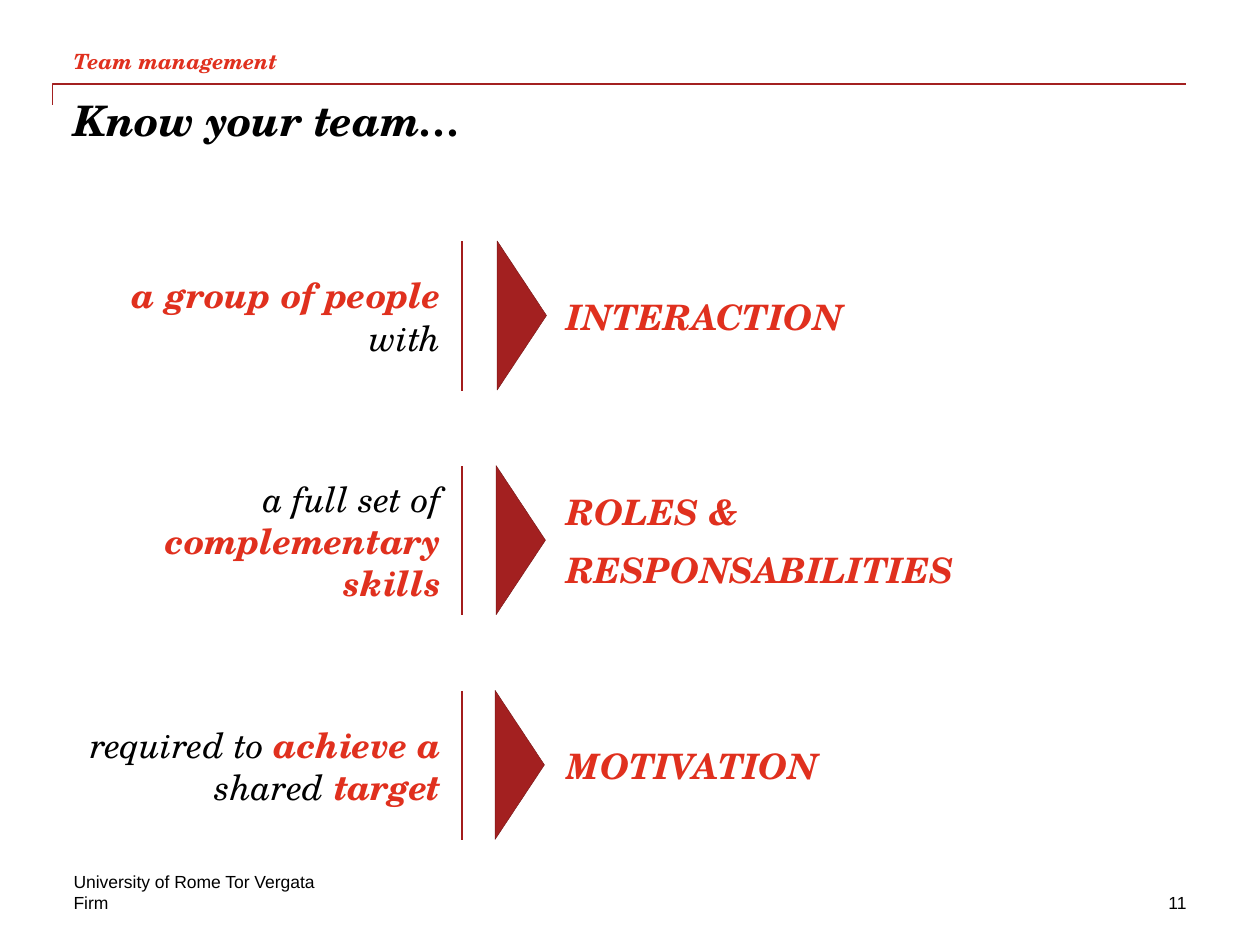
import pptx
import pptx.util
import pptx.dml.color
import pptx.enum.shapes
import pptx.enum.text
import pptx.oxml.ns
from lxml import etree

RGBColor = pptx.dml.color.RGBColor
ALIGN = pptx.enum.text.PP_ALIGN
ANCHOR = pptx.enum.text.MSO_ANCHOR
SHAPES = pptx.enum.shapes

PX = 7620
BLACK = RGBColor(0x00, 0x00, 0x00)
RED = RGBColor(0xE0, 0x30, 0x1E)
DARK_RED = RGBColor(0xA3, 0x20, 0x20)
RULE_RED = RGBColor(0xA3, 0x1C, 0x1C)
EDGE_RED = RGBColor(0x79, 0x18, 0x18)
SERIF = "TeX Gyre Schola"
SANS = "Arial"

ROWS = [
    ([("a group of people ", True), ("with", False)], ["INTERACTION"]),
    ([("a full set of ", False), ("complementary skills", True)],
     ["ROLES &", "RESPONSABILITIES"]),
    ([("required to ", False), ("achieve a", True), (" shared ", False),
      ("target", True)], ["MOTIVATION"]),
]


def add_text(s, box, paragraphs, size, font=SERIF, align=ALIGN.LEFT,
             anchor=ANCHOR.TOP, after=0):
    sp = s.shapes.add_textbox(*(v * PX for v in box))
    tf = sp.text_frame
    tf.word_wrap = True
    tf.vertical_anchor = anchor
    tf.margin_left = tf.margin_top = tf.margin_right = tf.margin_bottom = 0
    for i, runs in enumerate(paragraphs):
        p = tf.add_paragraph() if i else tf.paragraphs[0]
        p.alignment = align
        p.space_after = pptx.util.Pt(after)
        for text, color, bold in runs:
            r = p.add_run()
            r.text = text
            r.font.name = font
            r.font.size = pptx.util.Pt(size)
            r.font.bold = bold
            r.font.italic = font == SERIF
            r.font.color.rgb = color


def add_header(s, x, y, w):
    fb = s.shapes.build_freeform(x * PX, (y + 60) * PX)
    fb.add_line_segments([(x * PX, (y + 40) * PX),
                          ((x + w) * PX, (y + 40) * PX)], close=False)
    sp = fb.convert_to_shape()
    sp.shadow.inherit = False
    sp.fill.background()
    sp.line.color.rgb = DARK_RED
    sp.line.width = pptx.util.Pt(1)
    add_text(s, (x + 20, y, w - 20, 30), [[("Team management", RED, True)]],
             12, anchor=ANCHOR.BOTTOM)
    add_text(s, (x + 20, y + 50, w - 20, 120),
             [[("Know your team…", BLACK, True)]], 24)


def add_row(s, x, y, w, h, phrase, outcome, tip_shift):
    add_text(s, (x, y, 350, h),
             [[(text, RED if strong else BLACK, strong)
               for text, strong in phrase]],
             20, align=ALIGN.RIGHT, anchor=ANCHOR.MIDDLE, after=9)

    line = s.shapes.add_connector(
        SHAPES.MSO_CONNECTOR.STRAIGHT,
        (x + 370) * PX, y * PX, (x + 370) * PX, (y + h) * PX)
    line.line.color.rgb = RULE_RED
    line.line.width = pptx.util.Pt(0.75)
    etree.SubElement(line._element.spPr, pptx.oxml.ns.qn("a:effectLst"))

    depth = 47
    center = x + 427 - tip_shift
    sp = s.shapes.add_shape(
        SHAPES.MSO_SHAPE.ISOSCELES_TRIANGLE,
        (center - h // 2) * PX, (y + (h - depth) // 2) * PX, h * PX, depth * PX)
    sp.rotation = 90
    sp.shadow.inherit = False
    sp.fill.solid()
    sp.fill.fore_color.rgb = DARK_RED
    sp.line.color.rgb = EDGE_RED
    sp.line.width = pptx.util.Pt(0.25)

    add_text(s, (x + 470, y, w - 470, h),
             [[(text, RED, True)] for text in outcome],
             20, anchor=ANCHOR.MIDDLE, after=9)


def add_footer(s, x, y, w):
    add_text(s, (x, y, 690, 20),
             [[("University of Rome Tor Vergata", BLACK, False)]],
             10, SANS, anchor=ANCHOR.BOTTOM)
    add_text(s, (x, y + 20, 340, 20), [[("Firm", BLACK, False)]], 10, SANS)
    add_text(s, (x + w - 200, y + 20, 200, 20), [[("11", BLACK, False)]],
             10, SANS, align=ALIGN.RIGHT)


def main():
    prs = pptx.Presentation()
    prs.slide_width = 1200 * PX
    prs.slide_height = 900 * PX
    s = prs.slides.add_slide(prs.slide_layouts[6])
    add_header(s, 50, 40, 1080)
    for i, (phrase, outcome) in enumerate(ROWS):
        add_row(s, 70, 230 + i * 214, 1080, 142, phrase, outcome, i)
    add_footer(s, 70, 830, 1060)
    prs.save("out.pptx")


if __name__ == "__main__":
    main()
